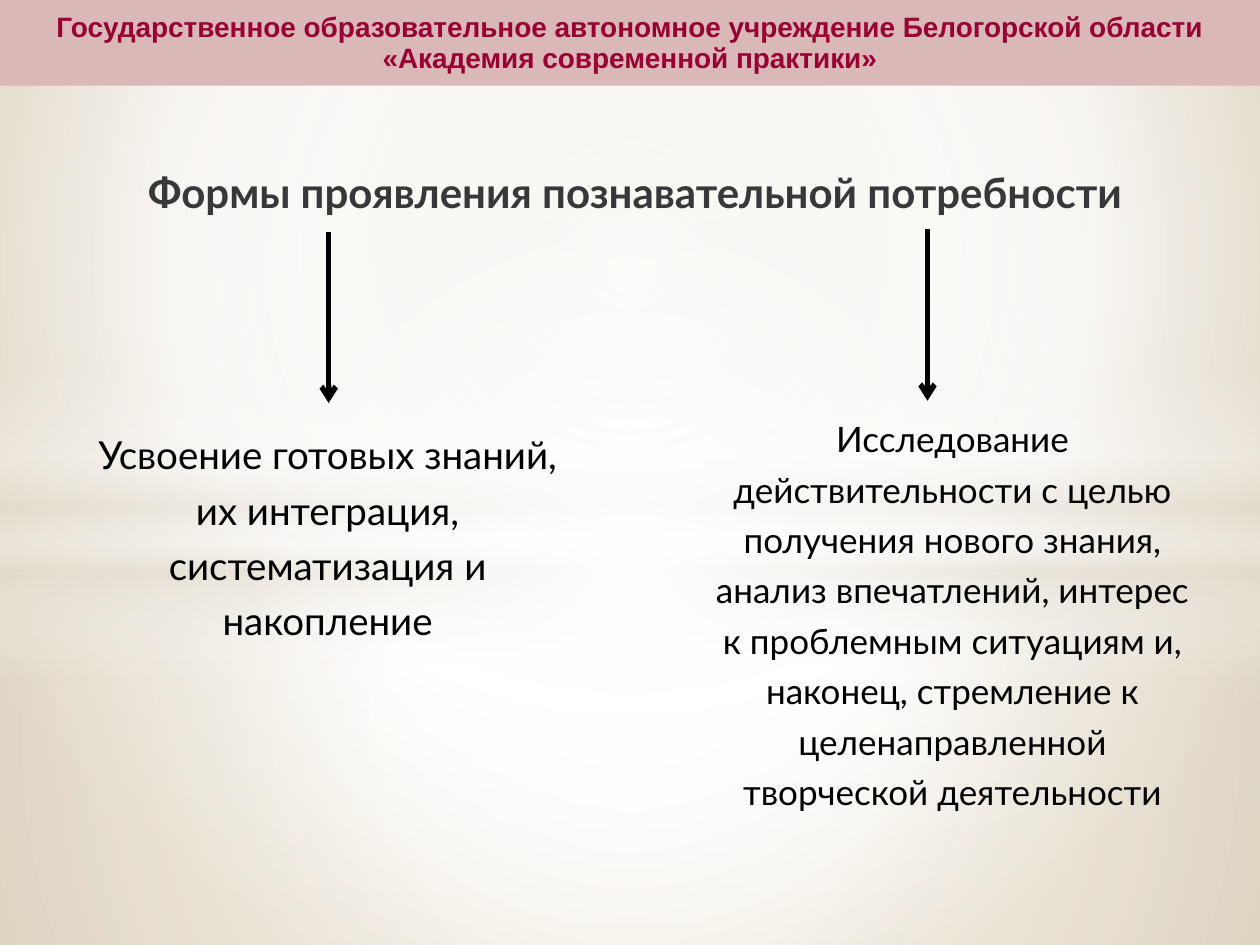
from lxml import etree
from pptx import Presentation
from pptx import util as u
from pptx.dml.color import RGBColor
from pptx.enum import shapes, text
from pptx.oxml import ns, parse_xml

W, H = 720, 540
SPLIT = 304.6
COLORS = {"band": "DAB8B8", "header": "990033", "title": "38383A", "ink": "000000",
          "white": "FFFFFF", "sand": "E3DCCF", "beige": "DFD5C1", "tan": "CCB791"}
CENTER = (50, 50, 50, 50)

BACKGROUND = ([(0, "beige", 100), (60, "white", 100), (100, "tan", 100)], (20, 10, 20, 60))
GLOWS = [
    ("RECTANGLE", (0, SPLIT, W, H - SPLIT),
     [(0, "white", 91), (37, "white", 76), (100, "sand", 79)], CENTER),
    ("RECTANGLE", (0, 0, W, SPLIT),
     [(0, "white", 89), (48, "white", 62), (100, "sand", 79)], CENTER),
    ("RECTANGLE", (0, 209, W, 180),
     [(0, "white", 0), (29, "white", 30), (45, "sand", 40), (55, "white", 26),
      (65, "sand", 60), (100, "white", 0)], None),
    ("OVAL", (0, 126, W, 402), [(0, "white", 100), (54, "white", 0)], CENTER),
]

HEADER = ["Государственное образовательное автономное учреждение Белогорской области",
          "«Академия современной практики»"]
TITLE = "Формы проявления познавательной потребности"
BRANCHES = [
    {"arrow": (187.8, 132.3), "box": (42.5, 237.6, 289.4, 146), "size": 22,
     "text": "Усвоение готовых знаний, их интеграция, систематизация и накопление"},
    {"arrow": (530, 131), "box": (399.6, 230.4, 289.4, 249), "size": 20,
     "text": "Исследование действительности с целью получения нового знания, "
             "анализ впечатлений, интерес к проблемным ситуациям и, наконец, "
             "стремление к целенаправленной творческой деятельности"},
]
ARROW_LENGTH = 98


def rgb(name):
    return RGBColor.from_string(COLORS[name])


def pts(values):
    return [u.Pt(v) for v in values]


def set_gradient(element, stops, focus):
    gs = "".join(
        f'<a:gs pos="{pos * 1000}"><a:srgbClr val="{COLORS[color]}">'
        f'<a:alpha val="{alpha * 1000}"/></a:srgbClr></a:gs>'
        for pos, color, alpha in stops)
    if focus:
        sides = " ".join(f'{k}="{v * 1000}"' for k, v in zip("ltrb", focus))
        shade = f'<a:path path="circle"><a:fillToRect {sides}/></a:path>'
    else:
        shade = '<a:lin ang="5400000" scaled="0"/>'
    old = element.xpath(".//a:gradFill")[0]
    new = parse_xml(f'<a:gradFill {ns.nsdecls("a")} rotWithShape="1">'
                    f'<a:gsLst>{gs}</a:gsLst>{shade}</a:gradFill>')
    old.getparent().replace(old, new)


def add_plain_shape(s, kind, box):
    sp = s.shapes.add_shape(getattr(shapes.MSO_SHAPE, kind), *pts(box))
    sp.shadow.inherit = False
    sp.line.fill.background()
    return sp


def write(sp, lines, anchor, spacing, before=0, insets=(7.2, 3.6, 7.2, 3.6), **font):
    tf = sp.text_frame
    tf.word_wrap = True
    tf.vertical_anchor = getattr(text.MSO_ANCHOR, anchor)
    for side, value in zip(("left", "top", "right", "bottom"), insets):
        setattr(tf, f"margin_{side}", u.Pt(value))
    color = font.pop("color")
    for i, line in enumerate(lines):
        p = tf.add_paragraph() if i else tf.paragraphs[0]
        layout = {"alignment": text.PP_ALIGN.CENTER, "line_spacing": spacing,
                  "space_before": u.Pt(before)}
        for key, value in layout.items():
            setattr(p, key, value)
        r = p.add_run()
        r.text = line
        for key, value in font.items():
            setattr(r.font, key, value)
        r.font.color.rgb = rgb(color)


def add_arrow(s, x, y):
    line = s.shapes.add_connector(shapes.MSO_CONNECTOR.STRAIGHT,
                                  *pts((x, y, x, y + ARROW_LENGTH)))
    line.line.color.rgb = rgb("ink")
    line.line.width = u.Pt(3)
    etree.SubElement(line.line._get_or_add_ln(), ns.qn("a:tailEnd"), type="arrow")
    etree.SubElement(line._element.spPr, ns.qn("a:effectLst"))


def main():
    prs = Presentation()
    prs.slide_width, prs.slide_height = pts((W, H))
    s = prs.slides.add_slide(prs.slide_layouts[6])

    s.background.fill.gradient()
    set_gradient(s._element, *BACKGROUND)
    for kind, box, stops, focus in GLOWS:
        sp = add_plain_shape(s, kind, box)
        sp.fill.gradient()
        set_gradient(sp._element, stops, focus)

    band = add_plain_shape(s, "RECTANGLE", (0, 0, W, 49))
    band.fill.solid()
    band.fill.fore_color.rgb = rgb("band")
    write(band, HEADER, "MIDDLE", 0.93, insets=(0, 0.7, 0, 0),
          name="Arial", size=u.Pt(16), bold=True, color="header")

    title = s.shapes.add_textbox(*pts((36.7, 94.3, 652.3, 33.8)))
    write(title, [TITLE], "BOTTOM", 0.9,
          name="Lato", size=u.Pt(24), bold=True, color="title")

    for branch in BRANCHES:
        add_arrow(s, *branch["arrow"])
        box = s.shapes.add_textbox(*pts(branch["box"]))
        write(box, [branch["text"]], "TOP", 1.2, before=branch["size"] * 0.2,
              name="Lato", size=u.Pt(branch["size"]), color="ink")

    prs.save("out.pptx")


if __name__ == "__main__":
    main()
